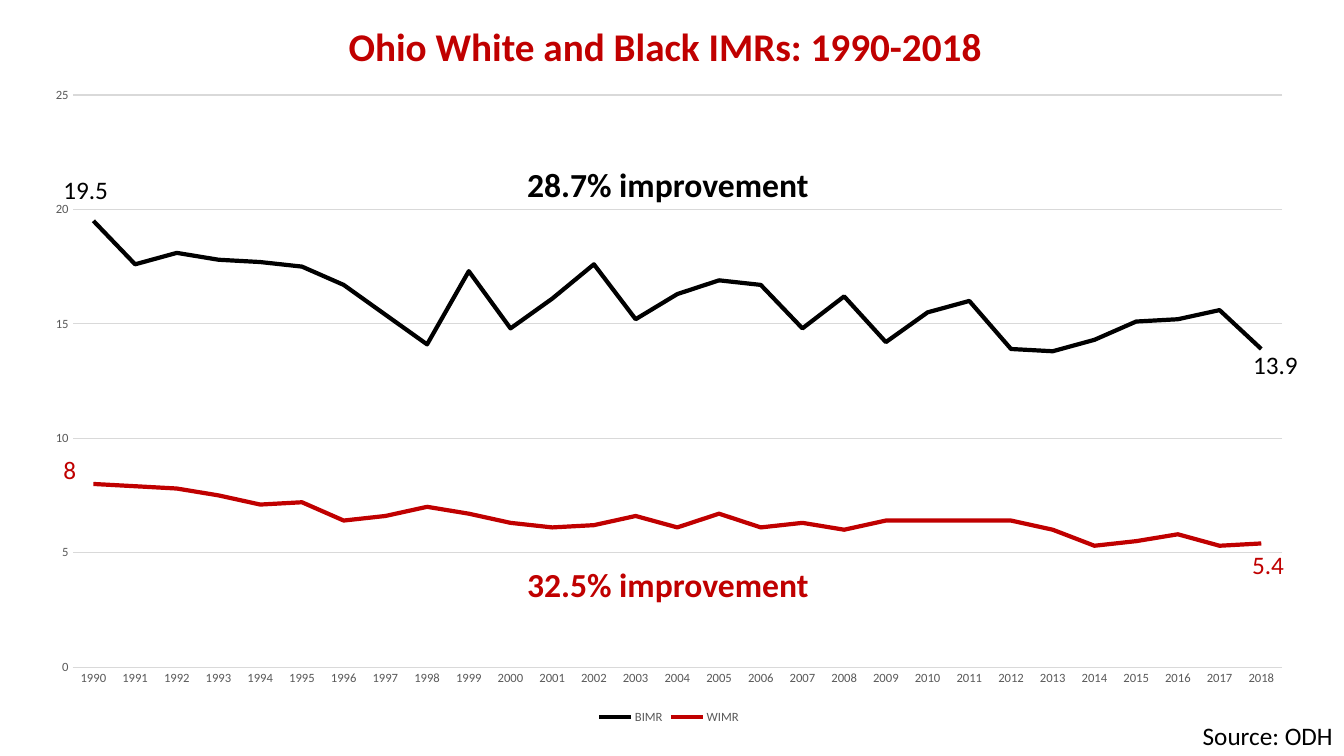
from pptx import Presentation
from pptx.chart.data import CategoryChartData
from pptx.dml.color import RGBColor
from pptx.enum.chart import XL_CHART_TYPE, XL_LEGEND_POSITION, XL_MARKER_STYLE, XL_TICK_MARK
from pptx.enum.text import MSO_AUTO_SIZE
from pptx.util import Inches, Pt

LINE = XL_CHART_TYPE.LINE
BOTTOM = XL_LEGEND_POSITION.BOTTOM
NO_MARKER = XL_MARKER_STYLE.NONE
NO_TICK = XL_TICK_MARK.NONE
FIT_SHAPE = MSO_AUTO_SIZE.SHAPE_TO_FIT_TEXT

FONT = "Calibri"
COLORS = {"black": "000000", "red": "C00000", "label": "595959", "grid": "D9D9D9"}

YEARS = [str(year) for year in range(1990, 2019)]
RATES = [
    ("BIMR", "black", [19.5, 17.6, 18.1, 17.8, 17.7, 17.5, 16.7, 15.4, 14.1, 17.3,
                       14.8, 16.1, 17.6, 15.2, 16.3, 16.9, 16.7, 14.8, 16.2, 14.2,
                       15.5, 16, 13.9, 13.8, 14.3, 15.1, 15.2, 15.6, 13.9]),
    ("WIMR", "red", [8, 7.9, 7.8, 7.5, 7.1, 7.2, 6.4, 6.6, 7, 6.7,
                     6.3, 6.1, 6.2, 6.6, 6.1, 6.7, 6.1, 6.3, 6, 6.4,
                     6.4, 6.4, 6.4, 6, 5.3, 5.5, 5.8, 5.3, 5.4]),
]

# Text, box (left, top, width, height), size, colour, bold
TITLE = ("Ohio White and Black IMRs: 1990-2018", (3.36, 0.17, 6.56, 0.57), 28, "red", True)
SOURCE = ("Source: ODH", (11.83, 7.1, 1.51, 0.4), 18, "black", False)
CALLOUTS = [
    ("32.5% improvement", (5.13, 5.55, 3.03, 0.5), 24, "red", True),
    ("28.7% improvement", (5.13, 1.58, 3.03, 0.5), 24, "black", True),
    ("19.5", (0.53, 1.68, 0.65, 0.4), 18, "black", False),
    ("13.9", (12.33, 3.42, 0.65, 0.4), 18, "black", False),
    ("5.4", (12.32, 5.4, 0.52, 0.4), 18, "red", False),
    ("8", (0.53, 4.46, 0.33, 0.4), 18, "red", False),
]


def rgb(name):
    return RGBColor.from_string(COLORS[name])


def style_font(font, size, color, bold=False):
    font.name = FONT
    font.size = Pt(size)
    font.bold = bold
    font.color.rgb = rgb(color)


def style_line(line, color, width):
    line.color.rgb = rgb(color)
    line.width = Pt(width)


def add_label(s, text, box, size, color, bold):
    tf = s.shapes.add_textbox(*map(Inches, box)).text_frame
    tf.word_wrap = False
    tf.auto_size = FIT_SHAPE
    r = tf.paragraphs[0].add_run()
    r.text = text
    style_font(r.font, size, color, bold)


def add_rate_chart(s, box):
    data = CategoryChartData()
    data.categories = YEARS
    for name, _, values in RATES:
        data.add_series(name, values)
    chart = s.shapes.add_chart(LINE, *map(Inches, box), data).chart
    chart.has_title = False
    style_font(chart.font, 10, "black")

    # Legend
    chart.has_legend = True
    chart.legend.position = BOTTOM
    chart.legend.include_in_layout = False
    style_font(chart.legend.font, 9, "label")

    # Axes
    for axis in (chart.category_axis, chart.value_axis):
        axis.major_tick_mark = axis.minor_tick_mark = NO_TICK
        style_font(axis.tick_labels.font, 9, "label")
    style_line(chart.category_axis.format.line, "grid", 0.75)
    value_axis = chart.value_axis
    value_axis.minimum_scale, value_axis.maximum_scale = 0, 25
    value_axis.major_unit = 5
    value_axis.format.line.fill.background()
    style_line(value_axis.major_gridlines.format.line, "grid", 0.75)

    # Series
    plot = chart.plots[0]
    plot.vary_by_categories = False
    for series, (_, color, _) in zip(plot.series, RATES):
        series.smooth = False
        series.marker.style = NO_MARKER
        style_line(series.format.line, color, 3)


def add_rate_slide(prs):
    s = prs.slides.add_slide(prs.slide_layouts[6])
    add_rate_chart(s, (0.3, 0.74, 12.67, 6.49))
    for label in (TITLE, SOURCE, *CALLOUTS):
        add_label(s, *label)


def main():
    prs = Presentation()
    prs.slide_width, prs.slide_height = Inches(13.33), Inches(7.5)
    add_rate_slide(prs)
    prs.save("out.pptx")


if __name__ == "__main__":
    main()
